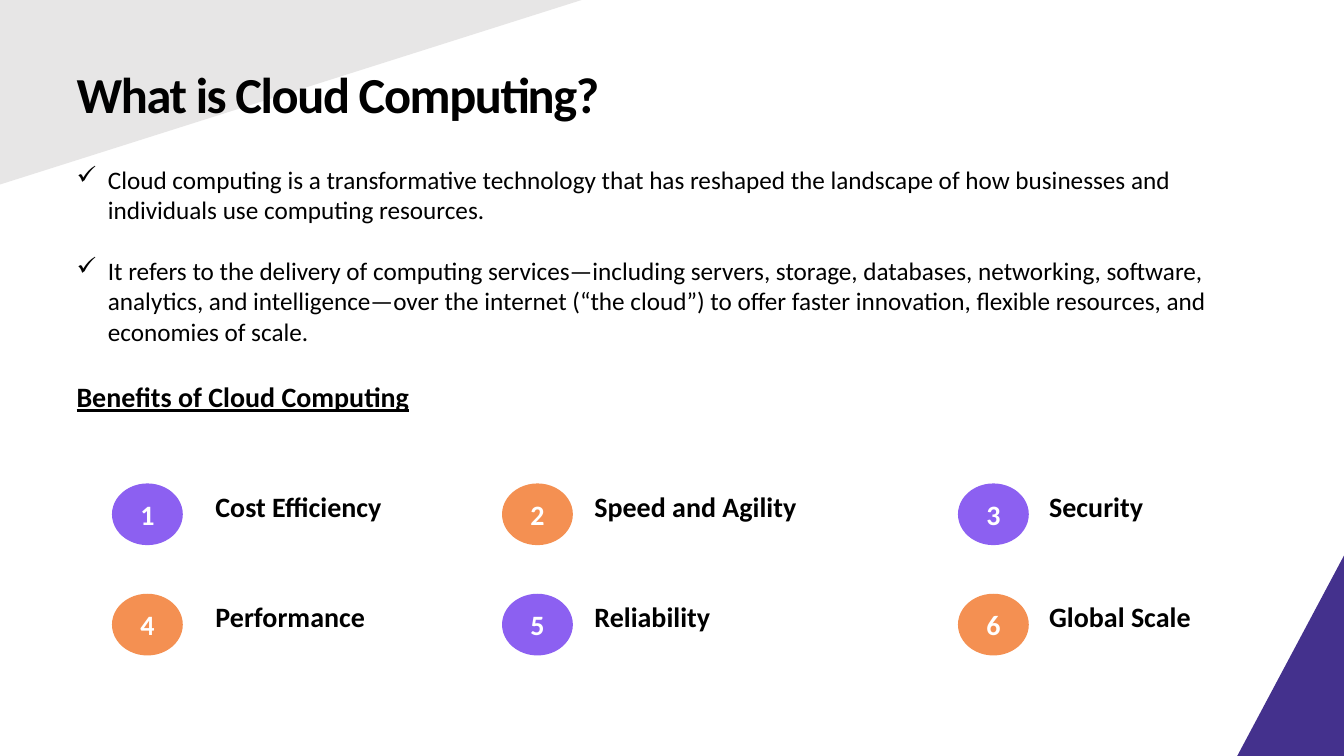
from lxml import etree
from pptx import Presentation
from pptx.dml.color import RGBColor
from pptx.enum.shapes import MSO_SHAPE
from pptx.enum.text import MSO_ANCHOR, MSO_AUTO_SIZE, PP_ALIGN
from pptx.oxml.ns import qn
from pptx.util import Cm, Pt

RIGHT_TRIANGLE = MSO_SHAPE.RIGHT_TRIANGLE
OVAL = MSO_SHAPE.OVAL
TOP = MSO_ANCHOR.TOP
MIDDLE = MSO_ANCHOR.MIDDLE
NO_AUTOFIT = MSO_AUTO_SIZE.NONE
FIT_SHAPE = MSO_AUTO_SIZE.SHAPE_TO_FIT_TEXT
LEFT = PP_ALIGN.LEFT
CENTER = PP_ALIGN.CENTER

BLACK = RGBColor(0x00, 0x00, 0x00)
WHITE = RGBColor(0xFF, 0xFF, 0xFF)
GREY = RGBColor(0xE7, 0xE6, 0xE6)
INDIGO = RGBColor(0x44, 0x31, 0x8D)
PURPLE = RGBColor(0x8C, 0x60, 0xF1)
ORANGE = RGBColor(0xF4, 0x90, 0x52)

BODY_FONT = "Calibri"
SLIDE_WIDTH, SLIDE_HEIGHT = Cm(33.87), Cm(19.05)

TITLE = "What is Cloud Computing?"
POINTS = [
    "Cloud computing is a transformative technology that has reshaped the "
    "landscape of how businesses and individuals use computing resources.",
    "It refers to the delivery of computing services—including servers, "
    "storage, databases, networking, software, analytics, and "
    "intelligence—over the internet (“the cloud”) to offer faster "
    "innovation, flexible resources, and economies of scale.",
]
BENEFITS_HEADING = "Benefits of Cloud Computing"
# Label and width of its text box in cm
BENEFITS = [
    ("Cost Efficiency", 4.78), ("Speed and Agility", 5.64), ("Security", 2.9),
    ("Performance", 4.32), ("Reliability", 3.45), ("Global Scale", 4.11),
]
# Offsets of badge and label from the left of the grid, per column
BENEFIT_COLUMNS = [
    (Cm(0), Cm(2.34)), (Cm(9.83), Cm(11.89)), (Cm(21.32), Cm(23.35)),
]
BENEFIT_ROW_PITCH = Cm(2.78)


def add_run(paragraph, text, size, color=BLACK, bold=False, underline=False):
    run = paragraph.add_run()
    run.text = text
    font = run.font
    font.name, font.size, font.color.rgb = BODY_FONT, Pt(size), color
    font.bold, font.underline = bold, underline
    return run


def add_text_frame(slide, left, top, width, height, wrap=True):
    text_frame = slide.shapes.add_textbox(left, top, width, height).text_frame
    text_frame.word_wrap = wrap
    text_frame.auto_size = FIT_SHAPE
    return text_frame


def add_corner_triangle(slide, left, top, width, height, rotation, color):
    """Fill the given box with a right triangle turned by a quarter."""
    shape = slide.shapes.add_shape(
        RIGHT_TRIANGLE, left + (width - height) // 2,
        top + (height - width) // 2, height, width)
    shape.rotation = rotation
    shape.shadow.inherit = False
    shape.fill.solid()
    shape.fill.fore_color.rgb = color
    shape.line.fill.background()


def place_title(slide, left, top, width, height):
    title = slide.shapes.title
    title.left, title.top, title.width, title.height = left, top, width, height
    text_frame = title.text_frame
    text_frame.word_wrap = True
    text_frame.auto_size = NO_AUTOFIT
    text_frame.vertical_anchor = TOP
    paragraph = text_frame.paragraphs[0]
    paragraph.alignment = LEFT
    run = add_run(paragraph, TITLE, 36, bold=True)
    run.font._element.set("spc", "-100")


def add_check_bullet(paragraph):
    properties = paragraph._p.get_or_add_pPr()
    properties.set("marL", str(Cm(0.79)))
    properties.set("indent", str(-Cm(0.79)))
    etree.SubElement(properties, qn("a:buChar")).set("char", "✓")


def add_overview(slide, left, top, width, height):
    text_frame = add_text_frame(slide, left, top, width, height)
    for index, point in enumerate(POINTS):
        if index == 0:
            paragraph = text_frame.paragraphs[0]
        else:
            paragraph = text_frame.add_paragraph()
        add_check_bullet(paragraph)
        if index > 0:
            paragraph.space_before = Pt(22)
        add_run(paragraph, point, 18)
    heading = text_frame.add_paragraph()
    heading.space_before = Pt(24)
    add_run(heading, BENEFITS_HEADING, 20, bold=True, underline=True)


def add_badge(slide, left, top, number, color):
    badge = slide.shapes.add_shape(OVAL, left, top, Cm(1.75), Cm(1.52))
    badge.shadow.inherit = False
    badge.fill.solid()
    badge.fill.fore_color.rgb = color
    badge.line.color.rgb = color
    badge.line.width = Pt(1)
    badge.text_frame.vertical_anchor = MIDDLE
    paragraph = badge.text_frame.paragraphs[0]
    paragraph.alignment = CENTER
    add_run(paragraph, str(number), 20, WHITE, bold=True)


def add_benefits(slide, left, top):
    for index, (label, label_width) in enumerate(BENEFITS):
        row, column = divmod(index, len(BENEFIT_COLUMNS))
        badge_offset, label_offset = BENEFIT_COLUMNS[column]
        row_top = top + row * BENEFIT_ROW_PITCH
        color = ORANGE if index % 2 else PURPLE
        add_badge(slide, left + badge_offset, row_top, index + 1, color)
        text_frame = add_text_frame(slide, left + label_offset, row_top,
                                    Cm(label_width), Cm(1.11), wrap=False)
        add_run(text_frame.paragraphs[0], label, 20, bold=True)


def build_cloud_slide(presentation):
    slide = presentation.slides.add_slide(presentation.slide_layouts[5])
    add_corner_triangle(slide, 0, 0, Cm(14.66), Cm(4.65), 90, GREY)
    # Keep the title in front of the grey corner
    slide.shapes._spTree.append(slide.shapes.title._element)
    place_title(slide, Cm(1.68), Cm(1.47), Cm(18.42), Cm(1.8))
    add_overview(slide, Cm(1.68), Cm(4.01), Cm(30.71), Cm(6.58))
    corner_width, corner_height = Cm(2.69), Cm(5.05)
    add_corner_triangle(slide, SLIDE_WIDTH - corner_width,
                        SLIDE_HEIGHT - corner_height,
                        corner_width, corner_height, 270, INDIGO)
    add_benefits(slide, Cm(2.84), Cm(12.2))


def main():
    presentation = Presentation()
    presentation.slide_width = SLIDE_WIDTH
    presentation.slide_height = SLIDE_HEIGHT
    build_cloud_slide(presentation)
    presentation.save("out.pptx")


if __name__ == "__main__":
    main()
